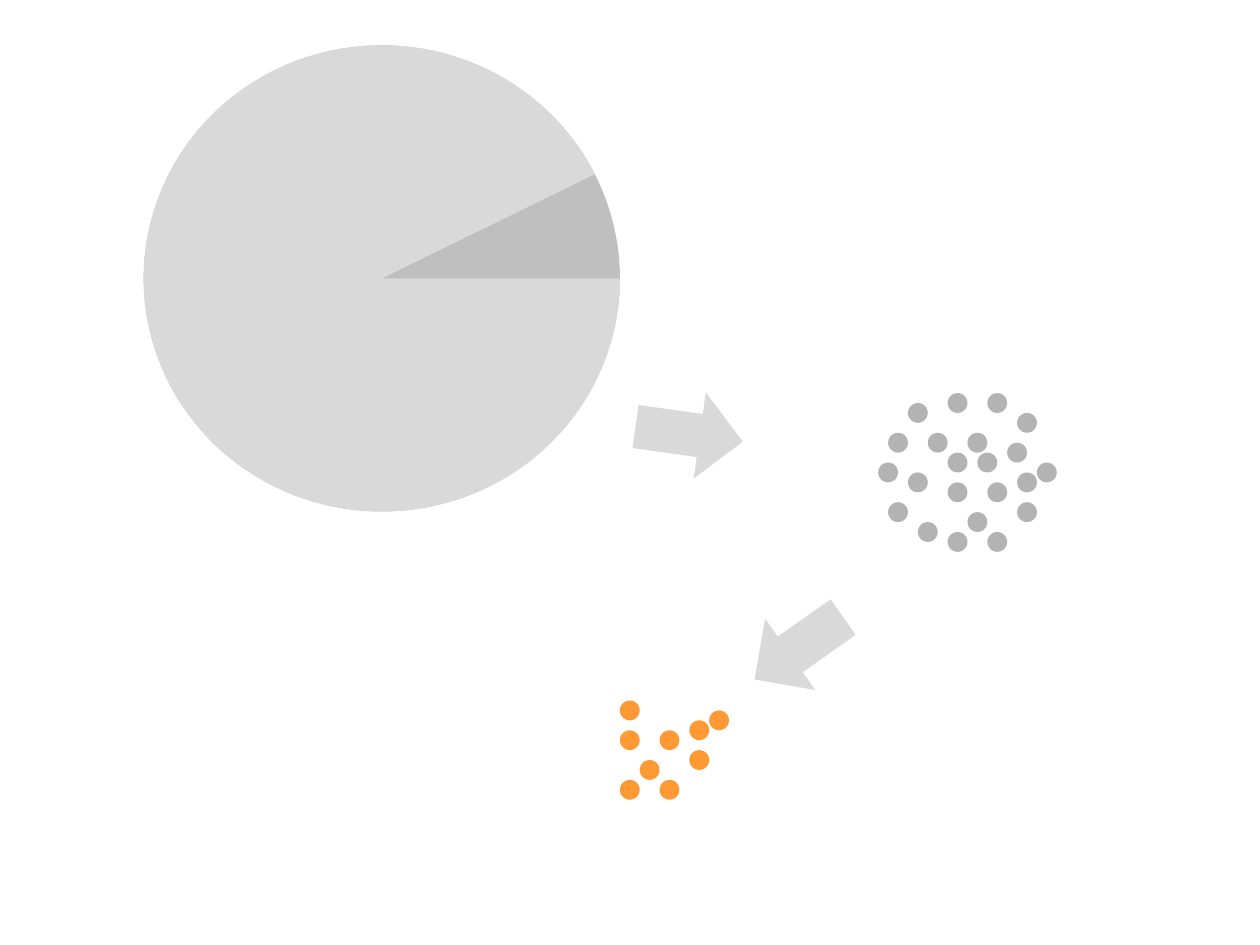
from dataclasses import dataclass

from pptx import Presentation, util as u
from pptx.dml.color import RGBColor
from pptx.enum import shapes

Kind = shapes.MSO_SHAPE


@dataclass(frozen=True)
class Theme:
    population: str = "D9D9D9"
    segment: str = "BFBFBF"
    arrow: str = "D9D9D9"
    sample: str = "B3B3B3"
    selected: str = "FF9933"


class SlideBuilder:
    """Draws on one slide; places are in inches, dots sit on a 2 mm grid."""

    CELL = u.Mm(2).inches
    DOT = 2 * CELL
    ARROW = (0.86, 0.69)

    def __init__(self, slide, theme):
        self.slide = slide
        self.theme = theme

    def shape(self, kind, left, top, width, height, color):
        box = [u.Inches(value) for value in (left, top, width, height)]
        shape = self.slide.shapes.add_shape(kind, *box)
        shape.shadow.inherit = False
        shape.fill.solid()
        shape.fill.fore_color.rgb = RGBColor.from_string(color)
        shape.line.fill.background()
        return shape

    def pie(self, left, top, width, height, end_angle):
        """A disc whose slice from end_angle to 360 degrees stays uncovered."""
        box = (left, top, width, height)
        self.shape(Kind.OVAL, *box, self.theme.segment)
        cover = self.shape(Kind.PIE, *box, self.theme.population)
        cover.adjustments[0] = 0
        cover.adjustments[1] = end_angle * 0.6  # 60000 units a degree, in 100000ths

    def arrow(self, left, top, rotation):
        shape = self.shape(Kind.RIGHT_ARROW, left, top, *self.ARROW, self.theme.arrow)
        shape.rotation = rotation

    def dots(self, left, top, rows, color):
        """Rows map a grid row to the grid columns that hold a dot."""
        for row, columns in rows.items():
            for column in columns:
                self.shape(Kind.OVAL, left + column * self.CELL,
                           top + row * self.CELL, self.DOT, self.DOT, color)


SAMPLE_ROWS = {
    0: (7, 11), 1: (3,), 2: (14,), 4: (1, 5, 9), 5: (13,), 6: (7, 10),
    7: (0, 16), 8: (3, 14), 9: (7, 11), 11: (1, 14), 12: (9,), 13: (4,),
    14: (7, 11),
}
SELECTED_ROWS = {0: (0,), 1: (9,), 2: (7,), 3: (0, 4), 5: (7,), 6: (2,), 8: (0, 4)}


def main():
    presentation = Presentation()
    presentation.slide_width = u.Inches(10)
    presentation.slide_height = u.Inches(7.5)
    theme = Theme()
    slide = presentation.slides.add_slide(presentation.slide_layouts[6])
    builder = SlideBuilder(slide, theme)

    # Whole population with one segment
    builder.pie(1.14, 0.36, 3.78, 3.7, end_angle=333.94)

    # Sample drawn from the segment
    builder.arrow(5.04, 3.1, rotation=8)
    builder.dots(6.97, 3.12, SAMPLE_ROWS, theme.sample)

    # Selection made from the sample
    builder.arrow(5.91, 4.8, rotation=144.9)
    builder.dots(4.92, 5.56, SELECTED_ROWS, theme.selected)

    presentation.save("out.pptx")


if __name__ == "__main__":
    main()
